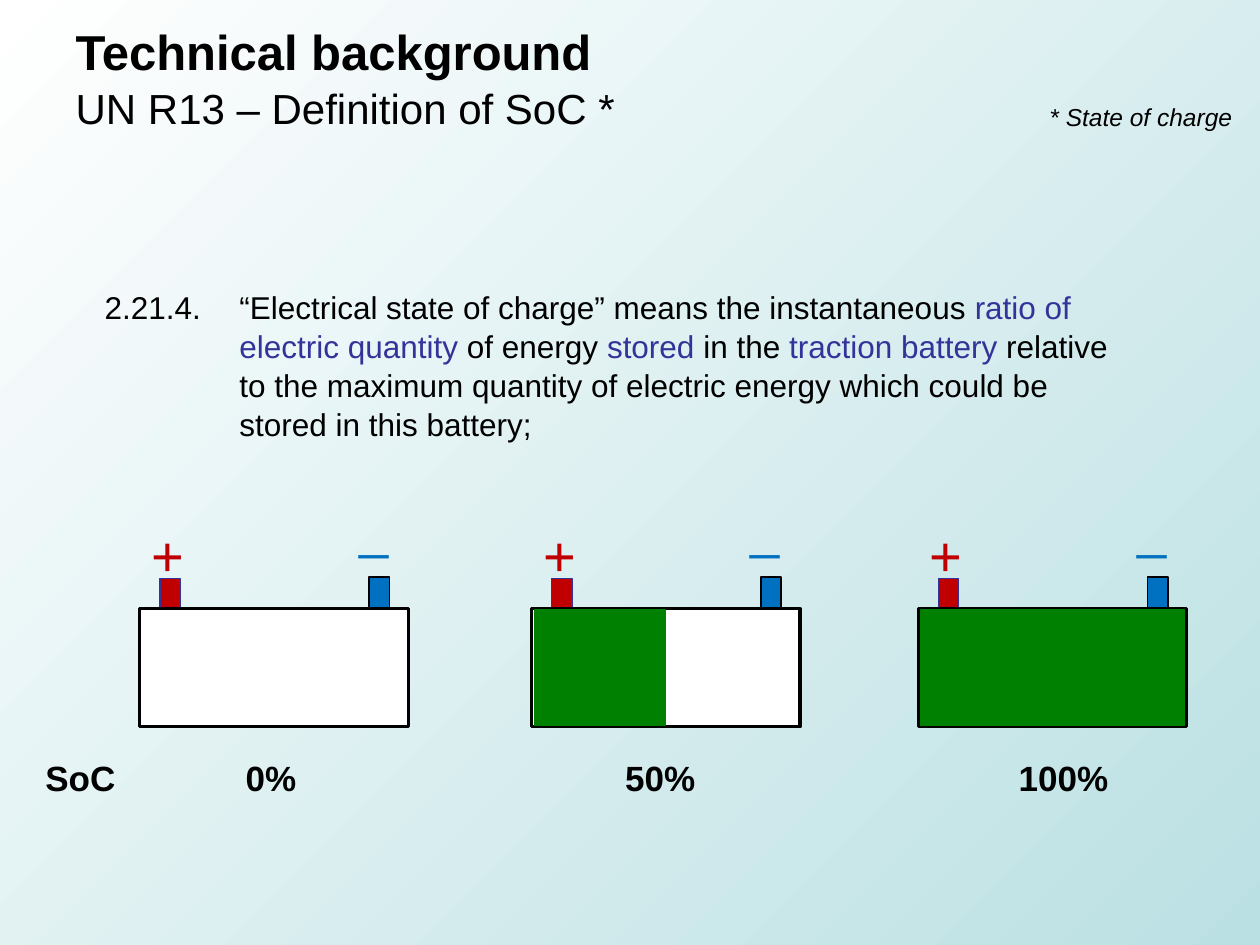
from dataclasses import dataclass

from pptx import Presentation
from pptx.dml.color import RGBColor
from pptx.enum.shapes import MSO_SHAPE
from pptx.enum.text import MSO_ANCHOR, MSO_AUTO_SIZE, PP_ALIGN
from pptx.util import Inches, Pt

COLS, ROWS = 100, 75
COLORS = {
    "black": "000000", "white": "FFFFFF", "mist": "BBE0E3", "indigo": "333399",
    "red": "C00000", "blue": "0070C0", "green": "008000",
}

prs = Presentation()
prs.slide_width, prs.slide_height = Inches(10), Inches(7.5)


@dataclass
class Box:
    """A place on the grid: left column, top row, columns wide, rows high."""
    x: float
    y: float
    w: float
    h: float

    def emu(self) -> list[int]:
        col, row = prs.slide_width / COLS, prs.slide_height / ROWS
        return [round(self.x * col), round(self.y * row),
                round(self.w * col), round(self.h * row)]


@dataclass
class Battery:
    x: float
    charge: float
    label: str
    label_x: float


BATTERIES = [
    Battery(11.1, 0, "0%", 15.6),
    Battery(42.2, 0.5, "50%", 46.5),
    Battery(72.9, 1, "100%", 78.5),
]


def rgb(name: str) -> RGBColor:
    return RGBColor.from_string(COLORS[name])


def write(sp, lines, *, size=18, color="black", bold=False, italic=False,
          align=PP_ALIGN.LEFT, anchor=MSO_ANCHOR.TOP, insets=(0, 0),
          hanging=0, spacing=1.0) -> None:
    """Fill a shape with lines of runs; a run is (text, overrides)."""
    tf = sp.text_frame
    tf.word_wrap, tf.auto_size, tf.vertical_anchor = True, MSO_AUTO_SIZE.NONE, anchor
    tf.margin_left = tf.margin_right = Inches(insets[0])
    tf.margin_top = tf.margin_bottom = Inches(insets[1])
    p = tf.paragraphs[0]
    p.alignment, p.line_spacing = align, spacing
    if hanging:
        pPr = p._p.get_or_add_pPr()
        pPr.set("marL", str(Inches(hanging)))
        pPr.set("indent", str(-Inches(hanging)))
    for i, line in enumerate(lines):
        if i:
            p.add_line_break()
        for text, changes in line:
            look = {"size": size, "color": color, "bold": bold, **changes}
            r = p.add_run()
            r.text = text
            r.font.name, r.font.size = "Arial", Pt(look["size"])
            r.font.bold, r.font.italic = look["bold"], italic
            r.font.color.rgb = rgb(look["color"])


def add_text(shapes, box: Box, text: str, **style) -> None:
    write(shapes.add_textbox(*box.emu()), [[(text, {})]], **style)


def add_rect(shapes, box: Box, fill: str, line: str, width: float = 0.75) -> None:
    sp = shapes.add_shape(MSO_SHAPE.RECTANGLE, *box.emu())
    sp.shadow.inherit = False
    sp.fill.solid()
    sp.fill.fore_color.rgb = rgb(fill)
    sp.line.color.rgb = rgb(line)
    sp.line.width = Pt(width)


def add_battery(s, b: Battery) -> None:
    shapes = s.shapes.add_group_shape().shapes
    add_rect(shapes, Box(b.x + 1.6, 45.9, 1.6, 2.4), "red", "indigo")
    add_rect(shapes, Box(b.x, 48.3, 21.3, 9.4), "white", "black", 1.75)
    add_rect(shapes, Box(b.x + 18.2, 45.8, 1.6, 2.4), "blue", "black")
    add_text(shapes, Box(b.x + 0.9, 42.8, 3.1, 2.4), "+", size=32,
             color="red", anchor=MSO_ANCHOR.MIDDLE)
    add_text(shapes, Box(b.x + 17.4, 40.7, 3.1, 2.4), "_", size=30,
             color="blue", anchor=MSO_ANCHOR.MIDDLE)
    if b.charge:
        add_rect(shapes, Box(b.x + 0.2, 48.4, 20.9 * b.charge, 9.2), "green", "green")
    add_text(shapes, Box(b.label_x, 60, 11.8, 3.1), b.label, size=20, bold=True,
             align=PP_ALIGN.CENTER)


def main() -> None:
    s = prs.slides.add_slide(prs.slide_layouts[5])
    fill = s.background.fill
    fill.gradient()
    fill.gradient_angle = 315
    for stop, name in zip(fill.gradient_stops, ("white", "mist")):
        stop.color.rgb = rgb(name)

    title = s.shapes.title
    title.left, title.top, title.width, title.height = Box(5, 0.8, 90, 12.5).emu()
    write(title, [[("Technical background", {"size": 28, "bold": True})],
                  [("UN R13 – Definition of SoC *", {})]],
          size=24, insets=(0.1, 0.07), spacing=1.04)

    key = {"color": "indigo"}
    definition = s.shapes.add_textbox(*Box(8.3, 22.7, 82, 14.8).emu())
    write(definition, [[
        ("2.21.4.\t“Electrical state of charge” means the instantaneous ", {}),
        ("ratio of electric quantity ", key), ("of energy ", {}),
        ("stored", key), (" in the ", {}), ("traction battery ", key),
        ("relative to the maximum quantity of electric energy which could be "
         "stored in this battery;", {}),
    ]], hanging=1.07, spacing=1.04)

    for battery in BATTERIES:
        add_battery(s, battery)
    add_text(s.shapes, Box(3.6, 60, 8.1, 3.1), "SoC", size=20, bold=True)
    add_text(s.shapes, Box(81.7, 7.6, 17.1, 3.4), "* State of charge", size=14,
             italic=True, align=PP_ALIGN.RIGHT, insets=(0.1, 0.05))
    prs.save("out.pptx")


if __name__ == "__main__":
    main()
